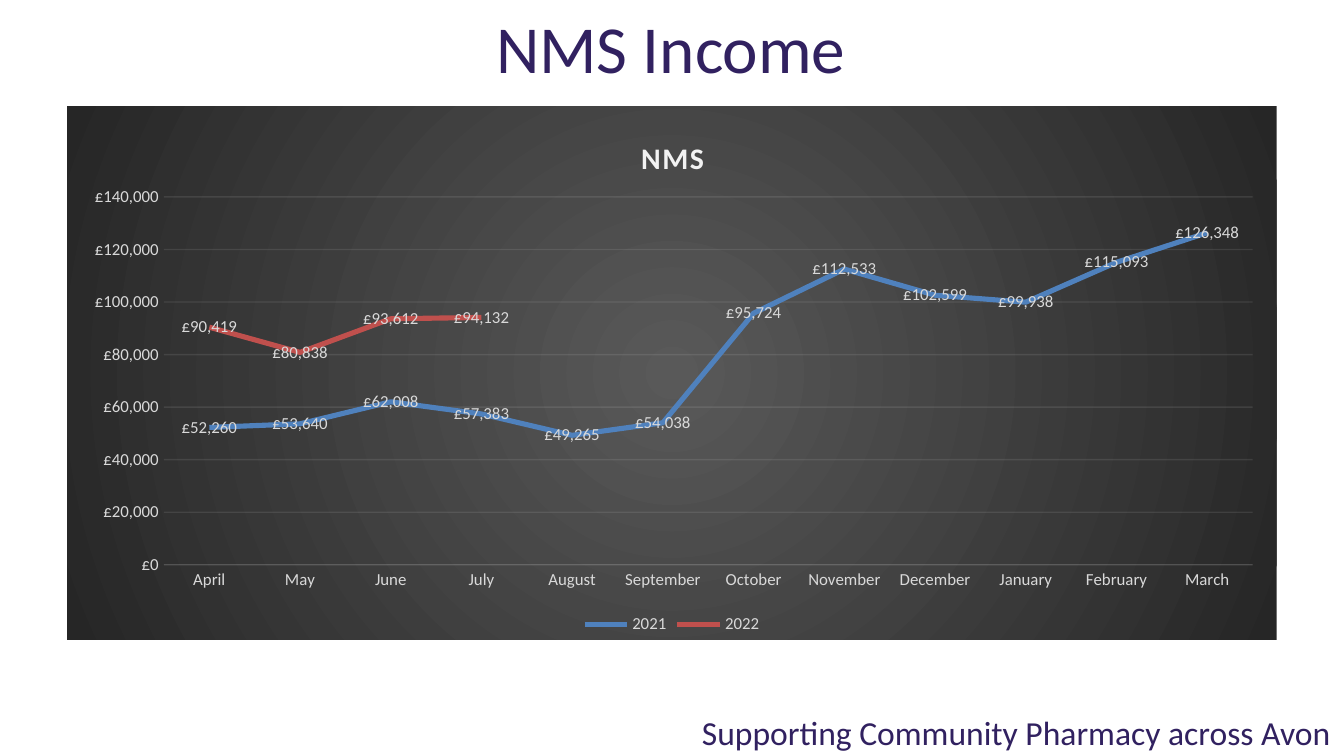
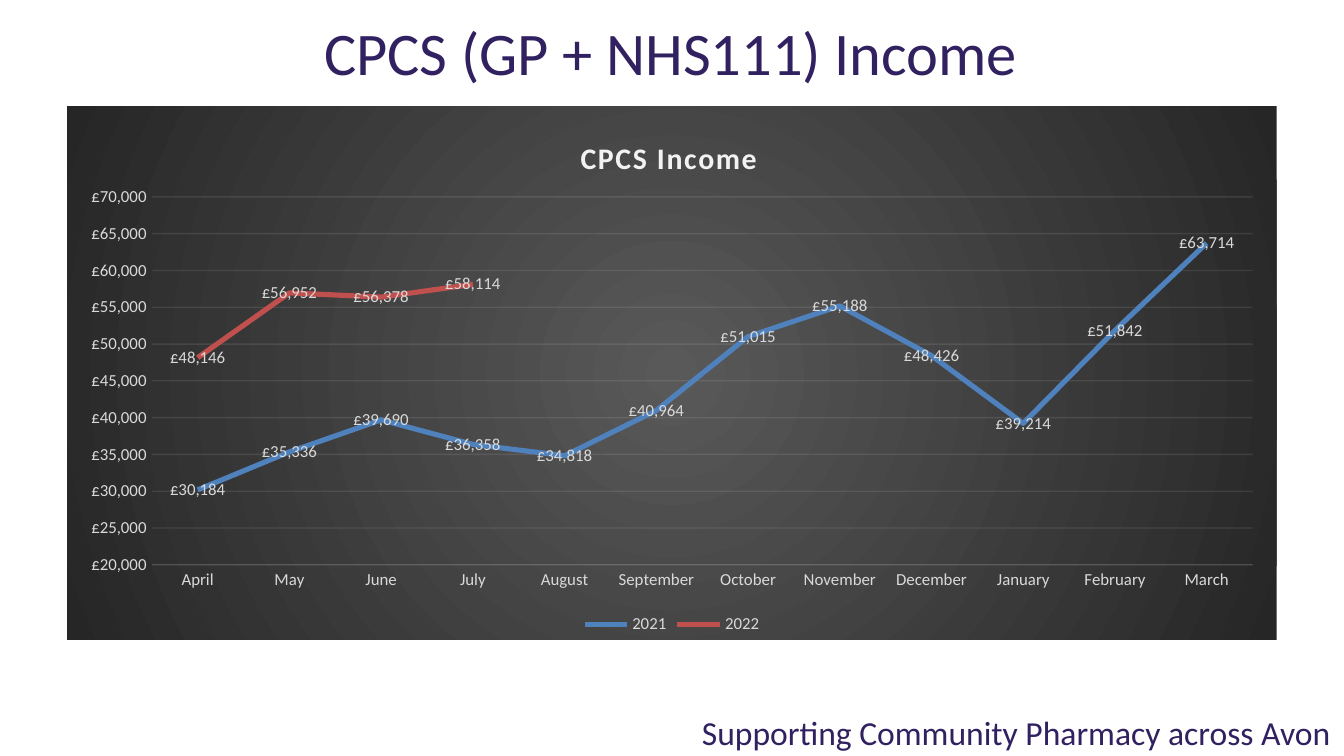
from lxml import etree
from pptx import Presentation
from pptx.chart.data import CategoryChartData
from pptx.dml.color import RGBColor
from pptx.enum.chart import (XL_CHART_TYPE as ChartType, XL_LABEL_POSITION as LabelPosition,
                             XL_LEGEND_POSITION as LegendPosition, XL_TICK_MARK as TickMark)
from pptx.enum.text import MSO_ANCHOR as Anchor, PP_ALIGN as Align
from pptx.oxml import parse_xml
from pptx.oxml.ns import nsdecls, qn
from pptx.util import Cm, Pt

FONT = "Calibri"
PURPLE, PALE, GREY = "312160", "F2F2F2", "D9D9D9"
DARK_INNER, DARK_OUTER = "595959", "262626"
SERIES_COLORS = {"2021": "4F81BD", "2022": "C0504D"}
POUNDS = '"£"#,##0'
MONTHS = ["April", "May", "June", "July", "August", "September", "October",
          "November", "December", "January", "February", "March"]
FOOTER = "Supporting Community Pharmacy across Avon"

NMS = {
    "2021": [52260, 53640, 62008, 57383, 49265, 54038,
             95724, 112533, 102599, 99938, 115093, 126348],
    "2022": [90419, 80838, 93612, 94132],
}
CPCS = {
    "2021": [30184, 35336, 39690, 36358, 34818, 40964,
             51015, 55188, 48426, 39214, 51842, 63714],
    "2022": [48146, 56952, 56378, 58114],
}


def rgb(color):
    return RGBColor.from_string(color)


def style_font(font, size, color, bold=False):
    font.name, font.size, font.bold = FONT, Pt(size), bold
    font.color.rgb = rgb(color)


def write(frame, text, size, color, align=None, bold=False, line_spacing=None):
    para = frame.paragraphs[0]
    para.alignment = align
    para.line_spacing = line_spacing
    span = para.add_run()
    span.text = text
    style_font(span.font, size, color, bold)


def style_line(line, color, width):
    line.color.rgb = rgb(color)
    line.width = Pt(width)


def manual_layout(target=None, **fractions):
    """Return a c:layout element placed by fractions of the chart area."""
    layout = parse_xml(f"<c:layout {nsdecls('c')}><c:manualLayout/></c:layout>")
    settings = {"layoutTarget": target} if target else {}
    settings |= {"xMode": "edge", "yMode": "edge"} | fractions
    for name, value in settings.items():
        etree.SubElement(layout[0], qn(f"c:{name}")).set("val", str(value))
    return layout


def radial_background(space):
    """Give the chart space a gradient that darkens from its centre."""
    stops = "".join(f'<a:gs pos="{pos}"><a:srgbClr val="{color}"/></a:gs>'
                    for pos, color in ((0, DARK_INNER), (100000, DARK_OUTER)))
    space.find(qn("c:chart")).addnext(parse_xml(
        f"<c:spPr {nsdecls('c', 'a')}><a:gradFill><a:gsLst>{stops}</a:gsLst>"
        '<a:path path="circle"><a:fillToRect l="50000" t="50000" r="50000" b="50000"/></a:path>'
        "</a:gradFill><a:ln><a:noFill/></a:ln></c:spPr>"))


class IncomeDeck:
    def __init__(self):
        self.deck = Presentation()
        self.deck.slide_width, self.deck.slide_height = Cm(25.4), Cm(14.29)
        self.page = None

    def add_page(self, title, size, line_spacing=None):
        self.page = self.deck.slides.add_slide(self.deck.slide_layouts[5])
        self.add_footer()
        box = self.page.shapes.title
        box.left, box.top, box.width, box.height = Cm(3.5), Cm(0.13), Cm(18.36), Cm(1.68)
        box.text_frame.vertical_anchor = Anchor.MIDDLE
        write(box.text_frame, title, size, PURPLE, Align.CENTER, line_spacing=line_spacing)

    def add_footer(self):
        box = self.page.shapes.add_textbox(Cm(6.86), Cm(13.46), Cm(18.54), Cm(0.76))
        box.text_frame.word_wrap = True
        box.text_frame.vertical_anchor = Anchor.MIDDLE
        write(box.text_frame, FOOTER, 18, PURPLE, Align.RIGHT)

    def add_line_chart(self, title, income, title_left, plot_left, plot_top, minimum=None):
        data = CategoryChartData(number_format=POUNDS)
        data.categories = MONTHS
        for year, values in income.items():
            data.add_series(year, values + [None] * (len(MONTHS) - len(values)))
        chart = self.page.shapes.add_chart(
            ChartType.LINE, Cm(1.27), Cm(2.01), Cm(22.86), Cm(10.08), data).chart
        style_font(chart.font, 10, "000000")
        chart.has_legend = True
        chart.legend.position = LegendPosition.BOTTOM
        chart.legend.include_in_layout = False
        style_font(chart.legend.font, 9, GREY)
        write(chart.chart_title.text_frame, title, 16, PALE, bold=True)

        self.style_axes(chart, minimum)
        self.style_series(chart.plots[0])

        space = chart.element
        radial_background(space)
        for color in space.xpath("c:chart/c:plotArea/c:catAx/c:spPr//a:srgbClr"
                                 " | .//c:majorGridlines//a:srgbClr"):
            etree.SubElement(color, qn("a:alpha")).set("val", "10000")
        for span in space.xpath(".//c:title//a:rPr"):
            span.set("spc", "100")
        for layout in space.xpath(".//c:title/c:layout | .//c:plotArea/c:layout"):
            layout.getparent().remove(layout)
        space.xpath(".//c:title/c:tx")[0].addnext(manual_layout(x=title_left, y=0.05))
        space.xpath(".//c:plotArea")[0].insert(0, manual_layout(
            "inner", x=plot_left, y=plot_top,
            w=round(0.98 - plot_left, 3), h=round(0.86 - plot_top, 3)))

    def style_axes(self, chart, minimum):
        months, pounds = chart.category_axis, chart.value_axis
        for axis in (months, pounds):
            axis.major_tick_mark = axis.minor_tick_mark = TickMark.NONE
            style_font(axis.tick_labels.font, 9, GREY)
        style_line(months.format.line, PALE, 0.75)
        pounds.format.line.fill.background()
        pounds.has_major_gridlines = True
        style_line(pounds.major_gridlines.format.line, PALE, 0.75)
        pounds.tick_labels.number_format = POUNDS
        pounds.tick_labels.number_format_is_linked = False
        if minimum is not None:
            pounds.minimum_scale = minimum

    def style_series(self, plot):
        plot.vary_by_categories = False
        for series in plot.series:
            series.smooth = False
            style_line(series.format.line, SERIES_COLORS[series.name], 2.75)
            labels = series.data_labels
            labels.show_value = True
            labels.position = LabelPosition.CENTER
            labels.number_format = POUNDS
            labels.number_format_is_linked = False
            style_font(labels.font, 9, GREY)


def main():
    income = IncomeDeck()
    income.add_page("NMS Income", 36, line_spacing=0.9)
    income.add_line_chart("NMS", NMS, title_left=0.47, plot_left=0.08, plot_top=0.17)
    income.add_page("CPCS (GP + NHS111) Income", 32.4)
    income.add_line_chart("CPCS Income", CPCS, title_left=0.42, plot_left=0.07,
                          plot_top=0.17, minimum=20000)
    income.deck.save("out.pptx")


if __name__ == "__main__":
    main()
